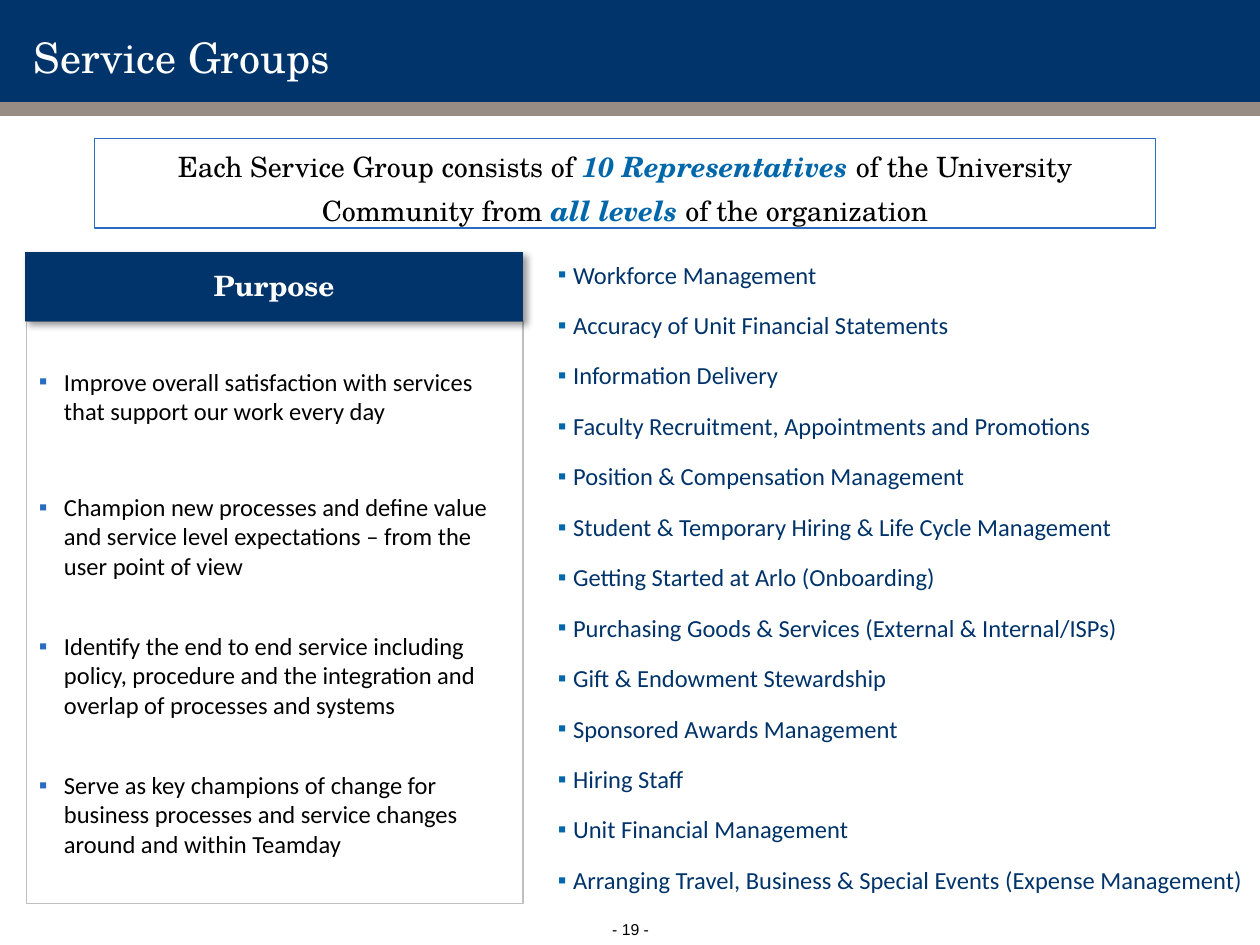
from dataclasses import dataclass

from lxml import etree
from pptx import Presentation
from pptx.dml.color import RGBColor
from pptx.enum.shapes import MSO_SHAPE
from pptx.enum.text import MSO_ANCHOR, PP_ALIGN
from pptx.oxml import parse_xml
from pptx.oxml.ns import nsdecls, qn
from pptx.util import Inches, Pt

RECTANGLE = MSO_SHAPE.RECTANGLE
TOP, MIDDLE, BOTTOM = MSO_ANCHOR.TOP, MSO_ANCHOR.MIDDLE, MSO_ANCHOR.BOTTOM
LEFT, CENTER = PP_ALIGN.LEFT, PP_ALIGN.CENTER


@dataclass(frozen=True)
class Theme:
    navy: str = "00346A"
    list_navy: str = "00336A"
    taupe: str = "978D85"
    blue: str = "296DC0"
    accent: str = "0067AB"
    gray: str = "BFBFBF"
    black: str = "000000"
    white: str = "FFFFFF"
    serif: str = "TeX Gyre Schola"
    sans: str = "Calibri"
    footer_font: str = "Arial"
    title_size: int = 24
    heading_size: int = 16
    body_size: int = 14
    footer_size: int = 9


theme = Theme()


def add_rectangle(left, top, width, height, fill=None, line=None, line_width=1):
    shape = slide.shapes.add_shape(
        RECTANGLE, Inches(left), Inches(top), Inches(width), Inches(height))
    shape.shadow.inherit = False
    if fill:
        shape.fill.solid()
        shape.fill.fore_color.rgb = RGBColor.from_string(fill)
    else:
        shape.fill.background()
    if line:
        shape.line.color.rgb = RGBColor.from_string(line)
        shape.line.width = Pt(line_width)
    else:
        shape.line.fill.background()
    return shape


def write_text(shape, paragraphs, font, size, color, bold=False, emphasis=None,
               align=LEFT, anchor=TOP, margins=(0.1, 0.1), wrap=True, spacing=None,
               before=(0,), after=0, bullet=None, indent=0):
    """Write paragraphs, each a list of runs; every second run is emphasized."""
    frame = shape.text_frame
    frame.word_wrap = wrap
    frame.vertical_anchor = anchor
    frame.margin_left = frame.margin_right = Inches(margins[0])
    frame.margin_top = frame.margin_bottom = Inches(margins[1])
    for index, runs in enumerate(paragraphs):
        paragraph = frame.add_paragraph() if index else frame.paragraphs[0]
        paragraph.alignment = align
        paragraph.line_spacing = spacing
        paragraph.space_before = Pt(before[min(index, len(before) - 1)])
        paragraph.space_after = Pt(after)
        if bullet:
            properties = paragraph._p.get_or_add_pPr()
            properties.set("marL", str(Inches(indent)))
            properties.set("indent", str(-Inches(indent)))
            bullet_color = etree.SubElement(properties, qn("a:buClr"))
            etree.SubElement(bullet_color, qn("a:srgbClr"), val=bullet)
            etree.SubElement(properties, qn("a:buFont"), typeface=theme.footer_font)
            etree.SubElement(properties, qn("a:buChar"), char="▪")
        for position, text in enumerate(runs):
            emphasized = position % 2 == 1
            run = paragraph.add_run()
            run.text = text
            run.font.name = font
            run.font.size = Pt(size)
            run.font.bold = bold or emphasized
            run.font.italic = emphasized
            run.font.color.rgb = RGBColor.from_string(emphasis if emphasized else color)


presentation = Presentation()
presentation.slide_width = Inches(10)
presentation.slide_height = Inches(7.5)
slide = presentation.slides.add_slide(presentation.slide_layouts[6])

# Header band and title
add_rectangle(0, 0, 10, 0.83, fill=theme.navy, line=theme.navy)
add_rectangle(0, 0.82, 10, 0.09, fill=theme.taupe, line=theme.taupe)
title = slide.shapes.add_textbox(Inches(0.17), Inches(0.12), Inches(9.23), Inches(0.63))
write_text(title, [["Service Groups"]], theme.serif, theme.title_size, theme.white,
           anchor=MIDDLE, margins=(0.1, 0.05), spacing=1.06)

# Summary statement
summary = add_rectangle(0.75, 1.1, 8.42, 0.71, line=theme.blue, line_width=0.75)
write_text(summary,
           [["Each Service Group consists of ", "10 Representatives ",
             "of the University Community from ", "all levels ", "of the organization"]],
           theme.serif, theme.heading_size, theme.black, emphasis=theme.accent,
           align=CENTER, anchor=MIDDLE, spacing=Pt(25), before=(6,), after=12)

# Purpose panel
purposes = [
    "Improve overall satisfaction with services that support our work every day",
    "Champion new processes and define value and service level expectations – "
    "from the user point of view",
    "Identify the end to end service including policy, procedure and the integration "
    "and overlap of processes and systems",
    "Serve as key champions of change for business processes and service changes "
    "around and within Teamday",
]
panel = add_rectangle(0.21, 2.55, 3.94, 4.62, line=theme.gray)
write_text(panel, [[text] for text in purposes], theme.sans, theme.body_size, theme.black,
           anchor=MIDDLE, before=(6, 35, 26), after=3, bullet=theme.blue, indent=0.2)

# Purpose heading with a soft shadow
heading = add_rectangle(0.2, 2, 3.95, 0.55, fill=theme.navy)
heading._element.spPr.find(qn("a:effectLst")).append(parse_xml(
    f'<a:outerShdw {nsdecls("a")} blurRad="{Pt(4)}" dist="{Pt(3)}" dir="2700000" '
    f'algn="tl" rotWithShape="0"><a:srgbClr val="{theme.black}">'
    '<a:alpha val="40000"/></a:srgbClr></a:outerShdw>'))
write_text(heading, [["Purpose"]], theme.serif, theme.heading_size, theme.white, bold=True,
           align=CENTER, anchor=MIDDLE, margins=(0, 0), spacing=0.95)

# Service group list
groups = [
    "Workforce Management",
    "Accuracy of Unit Financial Statements",
    "Information Delivery",
    "Faculty Recruitment, Appointments and Promotions",
    "Position & Compensation Management",
    "Student & Temporary Hiring & Life Cycle Management",
    "Getting Started at Arlo (Onboarding)",
    "Purchasing Goods & Services (External & Internal/ISPs)",
    "Gift & Endowment Stewardship",
    "Sponsored Awards Management",
    "Hiring Staff",
    "Unit Financial Management",
    "Arranging Travel, Business & Special Events (Expense Management)",
]
group_list = slide.shapes.add_textbox(
    Inches(4.33), Inches(1.96), Inches(6.08), Inches(5.62))
write_text(group_list, [[text] for text in groups], theme.sans, theme.body_size,
           theme.list_navy, before=(6,), after=6, bullet=theme.accent, indent=0.12)

# Page number
page_number = slide.shapes.add_textbox(
    Inches(4.85), Inches(7.29), Inches(0.31), Inches(0.16))
write_text(page_number, [["- 19 -"]], theme.footer_font, theme.footer_size, theme.black,
           align=CENTER, anchor=BOTTOM, margins=(0, 0), wrap=False, spacing=1.06)

presentation.save("out.pptx")
